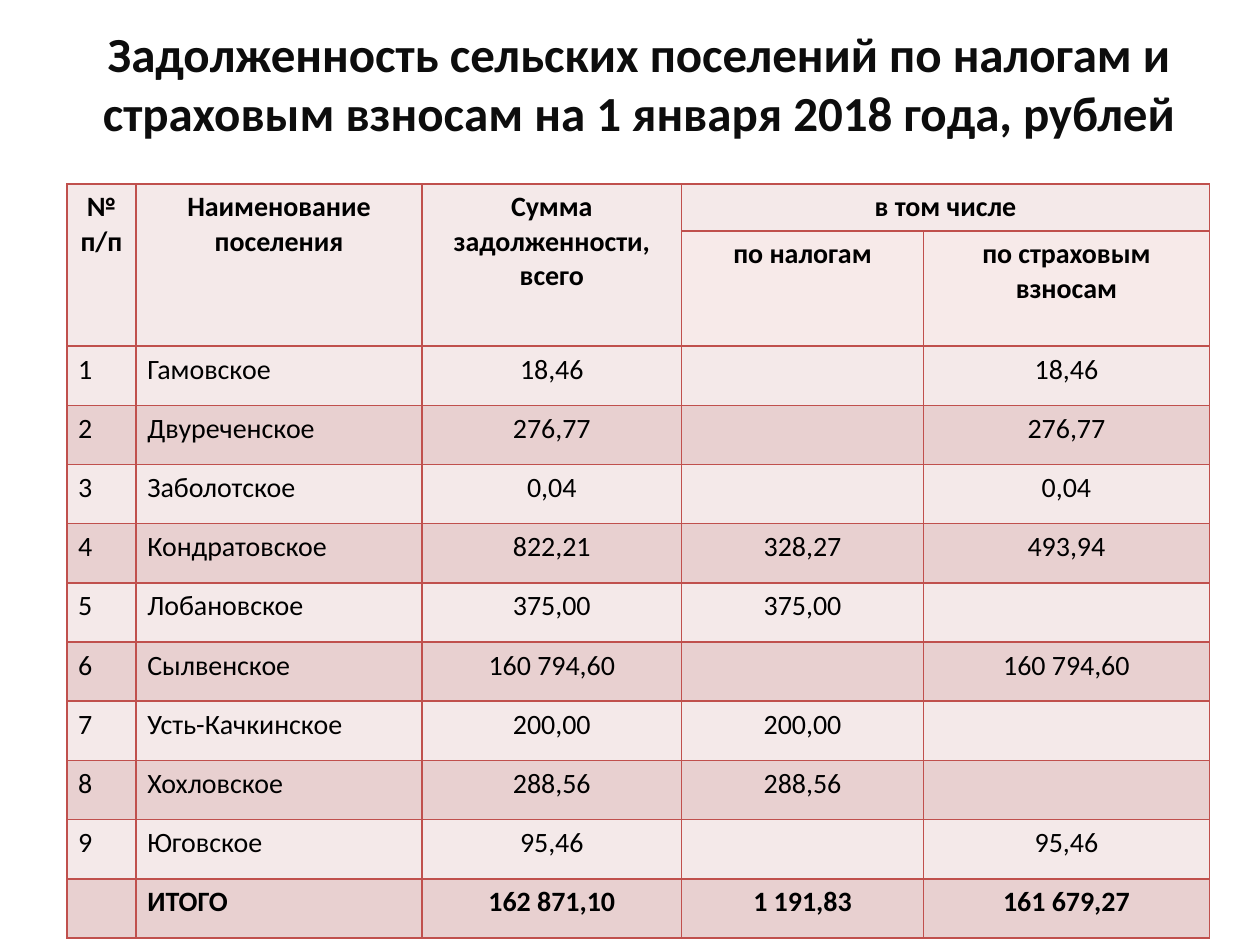
"""Build a slide with a table of settlement debts on taxes and insurance contributions."""
from lxml import etree
from pptx import Presentation
from pptx import util as u
from pptx.dml.color import RGBColor
from pptx.enum import text
from pptx.oxml.ns import qn

TITLE = "Задолженность сельских поселений по налогам и страховым взносам на 1 января 2018 года, рублей"
HEADER = [
    ("№ п/п", "Наименование поселения", "Сумма задолженности, всего", "в том числе", ""),
    ("", "", "", "по налогам", "по страховым взносам"),
]
DEBTS = [
    ("1", "Гамовское", "18,46", "", "18,46"),
    ("2", "Двуреченское", "276,77", "", "276,77"),
    ("3", "Заболотское", "0,04", "", "0,04"),
    ("4", "Кондратовское", "822,21", "328,27", "493,94"),
    ("5", "Лобановское", "375,00", "375,00", ""),
    ("6", "Сылвенское", "160 794,60", "", "160 794,60"),
    ("7", "Усть-Качкинское", "200,00", "200,00", ""),
    ("8", "Хохловское", "288,56", "288,56", ""),
    ("9", "Юговское", "95,46", "", "95,46"),
]
TOTAL = ("", "ИТОГО", "162 871,10", "1 191,83", "161 679,27")
ROWS = [*HEADER, *DEBTS, TOTAL]
MERGES = [((0, 0), (1, 0)), ((0, 1), (1, 1)), ((0, 2), (1, 2)), ((0, 3), (0, 4))]
COLUMN_WIDTHS = [0.55, 2.27, 2.06, 1.92, 2.27]
ROW_HEIGHTS = [0.36, 0.63] + [0.47] * (len(DEBTS) + 1)

FONT = "Calibri"
TITLE_COLOR = RGBColor(0x0D, 0x0D, 0x0D)
BLACK = RGBColor(0, 0, 0)
BORDER = RGBColor(0xC0, 0x50, 0x4D)
SUBHEAD = RGBColor(0xF7, 0xEA, 0xE9)
BANDS = [RGBColor(0xF4, 0xE9, 0xE9), RGBColor(0xE8, 0xD0, 0xD0)]


def set_font(p, size, color, bold):
    p.font.name, p.font.size, p.font.bold = FONT, u.Pt(size), bold
    p.font.color.rgb = color


def add_borders(cell):
    tc_pr = cell._tc.get_or_add_tcPr()
    for side in ("lnL", "lnR", "lnT", "lnB"):
        ln = etree.SubElement(tc_pr, qn(f"a:{side}"), w=str(u.Pt(1)))
        fill = etree.SubElement(ln, qn("a:solidFill"))
        etree.SubElement(fill, qn("a:srgbClr"), val=str(BORDER))


def format_cell(cell, row, col):
    header = row < len(HEADER)
    add_borders(cell)
    cell.fill.solid()
    cell.fill.fore_color.rgb = SUBHEAD if row == 1 and col > 2 else BANDS[row % 2]
    cell.margin_left = cell.margin_right = u.Inches(0.09)
    cell.margin_top = cell.margin_bottom = u.Inches(0.05)
    cell.text = ROWS[row][col]
    p = cell.text_frame.paragraphs[0]
    p.alignment = text.PP_ALIGN.CENTER if header or col > 1 else text.PP_ALIGN.LEFT
    set_font(p, 16, BLACK, header or row == len(ROWS) - 1)


def add_title(s):
    title = s.shapes.title
    title.left, title.top, title.width, title.height = map(u.Inches, (0.53, 0.03, 9.08, 1.25))
    tf = title.text_frame
    tf.text = TITLE
    tf.vertical_anchor = text.MSO_ANCHOR.MIDDLE
    p = tf.paragraphs[0]
    p.alignment = text.PP_ALIGN.CENTER
    set_font(p, 28, TITLE_COLOR, True)


def add_debt_table(s):
    box = map(u.Inches, (0.53, 1.46, sum(COLUMN_WIDTHS), sum(ROW_HEIGHTS)))
    table = s.shapes.add_table(len(ROWS), len(COLUMN_WIDTHS), *box).table
    for column, width in zip(table.columns, COLUMN_WIDTHS):
        column.width = u.Inches(width)
    for row, height in zip(table.rows, ROW_HEIGHTS):
        row.height = u.Inches(height)
    for row in range(len(ROWS)):
        for col in range(len(COLUMN_WIDTHS)):
            format_cell(table.cell(row, col), row, col)
    for first, last in MERGES:
        table.cell(*first).merge(table.cell(*last))


def main():
    prs = Presentation()
    prs.slide_width, prs.slide_height = u.Inches(10), u.Inches(7.5)
    s = prs.slides.add_slide(prs.slide_layouts[5])
    add_title(s)
    add_debt_table(s)
    prs.save("out.pptx")


if __name__ == "__main__":
    main()
